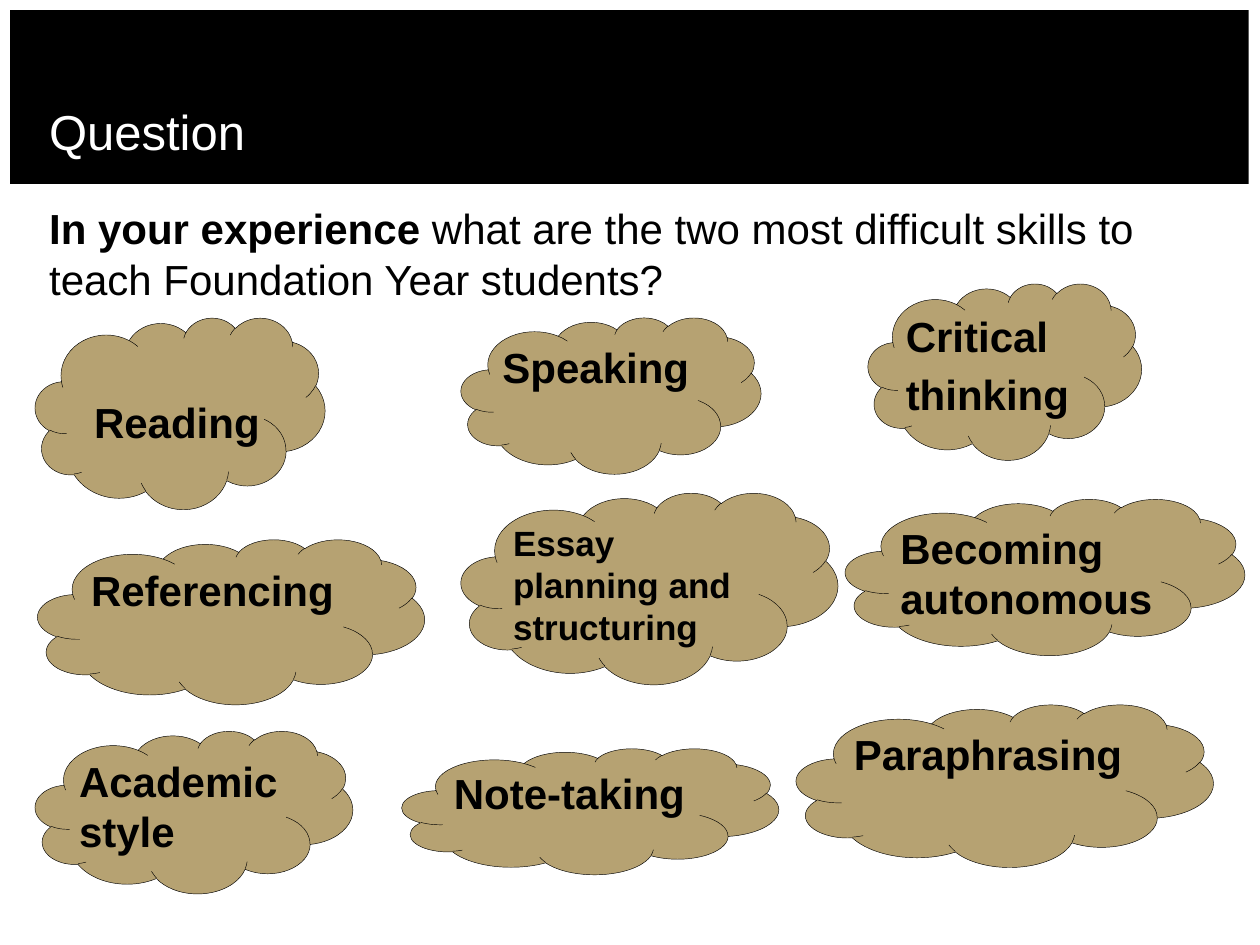
from pptx import Presentation
from pptx.dml.color import RGBColor
from pptx.enum.shapes import MSO_SHAPE as SHAPE
from pptx.enum.text import MSO_ANCHOR as ANCHOR, PP_ALIGN as ALIGN
from pptx.util import Inches, Pt

UNIT = Inches(0.1)  # the slide is a grid of 100 columns by 75 rows
COLS, ROWS = 100, 75
COLORS = {"band": "000000", "title": "FFFFFF", "text": "000000",
          "cloud": "B6A272", "outline": "000000"}

BAND = (0.8, 0.8, 98.3, 13.8)
BODY = (3.9, 16.1, 92.2, 54.8)
QUESTION = [("In your experience ", True),
            ("what are the two most difficult skills to teach "
             "Foundation Year students?", False)]
# box in columns and rows, paragraphs, options
CLOUDS = [
    ((67.1, 39.6, 31.7, 12.4), ["Becoming autonomous"], {}),
    ((2.8, 25.2, 23, 15.2), ["Reading"], {"indent": 1.5, "drop": 4}),
    ((36.6, 25.2, 23.8, 12.4), ["Speaking"], {}),
    ((68.9, 22.5, 21.7, 14), ["Critical", "thinking"], {}),
    ((3, 42.8, 30.7, 13.1), ["Referencing"], {}),
    ((63.2, 55.9, 33.1, 12.9), ["Paraphrasing"], {}),
    ((2.8, 58, 25.2, 12.9), ["Academic style"], {}),
    ((31.9, 59.4, 29.9, 10), ["Note-taking"], {}),
    ((36.6, 39.1, 29.9, 15.2), ["Essay planning and structuring"], {"size": 20}),
]


def grid(*units):
    return [round(u * UNIT) for u in units]


def rgb(name):
    return RGBColor.from_string(COLORS[name])


def write(shape, paragraphs, size, color="text", anchor=ANCHOR.TOP, indent=0, drop=0):
    """Fill a shape with paragraphs, each a list of (text, bold) runs."""
    tf = shape.text_frame
    left, top = grid(indent, drop)
    frame = {"word_wrap": True, "vertical_anchor": anchor, "margin_left": left,
             "margin_top": top, "margin_right": 0, "margin_bottom": 0}
    for name, value in frame.items():
        setattr(tf, name, value)
    for i, runs in enumerate(paragraphs):
        p = tf.add_paragraph() if i else tf.paragraphs[0]
        p.alignment = ALIGN.LEFT
        p.space_before = Pt(size * 0.2 if i else 0)
        for text, bold in runs:
            r = p.add_run()
            r.text = text
            for name, value in {"name": "Arial", "size": Pt(size), "bold": bold}.items():
                setattr(r.font, name, value)
            r.font.color.rgb = rgb(color)


def add_shape(s, kind, box, fill):
    sp = s.shapes.add_shape(kind, *grid(*box))
    sp.shadow.inherit = False
    sp.fill.solid()
    sp.fill.fore_color.rgb = rgb(fill)
    return sp


def title_band(s, box, title):
    x, y, w, h = box
    add_shape(s, SHAPE.RECTANGLE, box, "band").line.fill.background()
    label = (x + 3.1, y + 3.8, w * 0.54, h - 5.7)
    write(s.shapes.add_textbox(*grid(*label)), [[(title, False)]], 28, "title", ANCHOR.BOTTOM)


def question(s, box, runs):
    write(s.shapes.add_textbox(*grid(*box)), [runs], 24)


def cloud(s, box, lines, size=24, **insets):
    sp = add_shape(s, SHAPE.CLOUD, box, "cloud")
    sp.line.color.rgb = rgb("outline")
    sp.line.width = Pt(0.25)
    write(sp, [[(line, True)] for line in lines], size, **insets)


def main():
    prs = Presentation()
    prs.slide_width, prs.slide_height = grid(COLS, ROWS)
    s = prs.slides.add_slide(prs.slide_layouts[6])
    title_band(s, BAND, "Question")
    question(s, BODY, QUESTION)
    for box, lines, options in CLOUDS:
        cloud(s, box, lines, **options)
    prs.save("out.pptx")


if __name__ == "__main__":
    main()
